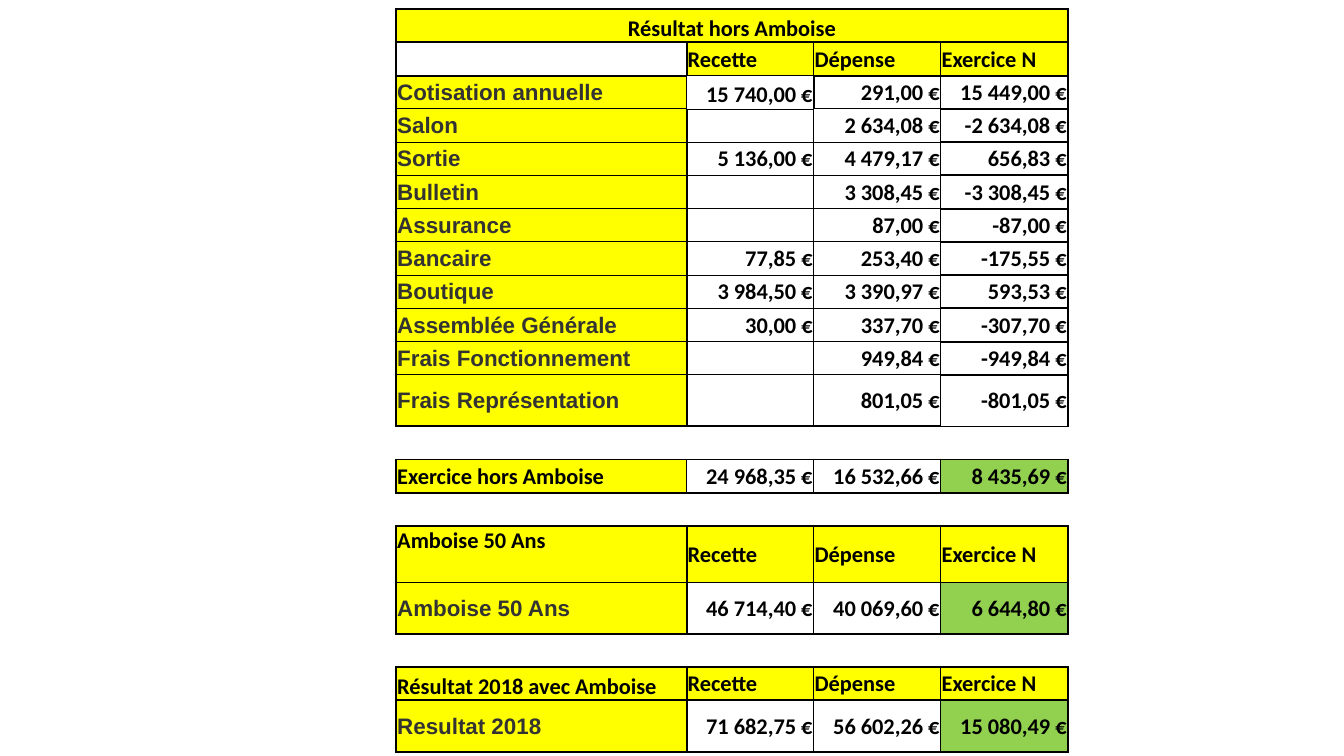
from lxml import etree
from pptx import Presentation, util as u
from pptx.dml.color import RGBColor
from pptx.enum import text
from pptx.oxml import ns

COLORS = {"ink": "000000", "label": "333333", "head": "FFFF00", "total": "92D050"}
HEADS = ["Recette", "Dépense", "Exercice N"]
WIDTHS = [2.88, 1.26, 1.26, 1.26]
HEIGHTS = {"tall": 0.51, "double": 0.56}
ROW = 0.33

# Each row: kind, height, cell texts
ROWS = [
    ("title", "", ["Résultat hors Amboise", "", "", ""]),
    ("head", "", ["", *HEADS]),
    ("body", "", ["Cotisation annuelle", "15 740,00 €", "291,00 €", "15 449,00 €"]),
    ("body", "", ["Salon", "", "2 634,08 €", "-2 634,08 €"]),
    ("body", "", ["Sortie", "5 136,00 €", "4 479,17 €", "656,83 €"]),
    ("body", "", ["Bulletin", "", "3 308,45 €", "-3 308,45 €"]),
    ("body", "", ["Assurance", "", "87,00 €", "-87,00 €"]),
    ("body", "", ["Bancaire", "77,85 €", "253,40 €", "-175,55 €"]),
    ("body", "", ["Boutique", "3 984,50 €", "3 390,97 €", "593,53 €"]),
    ("body", "", ["Assemblée Générale", "30,00 €", "337,70 €", "-307,70 €"]),
    ("body", "", ["Frais Fonctionnement", "", "949,84 €", "-949,84 €"]),
    ("body", "tall", ["Frais Représentation", "", "801,05 €", "-801,05 €"]),
    ("gap", "", [""] * 4),
    ("sum", "", ["Exercice hors Amboise", "24 968,35 €", "16 532,66 €", "8 435,69 €"]),
    ("gap", "", [""] * 4),
    ("head", "double", ["Amboise 50 Ans", *HEADS]),
    ("total", "tall", ["Amboise 50 Ans", "46 714,40 €", "40 069,60 €", "6 644,80 €"]),
    ("gap", "", [""] * 4),
    ("head", "", ["Résultat 2018 avec Amboise", *HEADS]),
    ("total", "tall", ["Resultat 2018", "71 682,75 €", "56 602,26 €", "15 080,49 €"]),
]
FIRST, LAST = 2, 11

# Left, top, right, bottom widths that break the column rule
ODD = {
    (1, 1): (1.5, 1.5, 1, 0.5),
    (2, 0): (1.5, 1.5, 0.5, 1),
    (2, 1): (0.5, 0.5, 1.5, 0.5),
    (2, 2): (1.5, 1.5, 1, 1),
    (3, 1): (1.5, 0.5, 1, 1),
    (LAST, 3): (1, 1.5, 1.5, 1),
    (LAST + 1, 3): (0, 1, 0, 1.5),
    (13, 0): (1.5, 1.5, 1, 1.5),
    (13, 1): (1, 1.5, 1, 1.5),
}


def edges(row, col, kind):
    """Return the left, top, right and bottom border widths in points."""
    if (row, col) in ODD:
        return ODD[row, col]
    if kind == "title":
        return (1.5,) * 4
    if kind == "gap":
        return 0, 1.5, 0, 1.5
    left = 1.5 if col < 2 else 1
    right = 1.5 if col in (0, 3) else 1
    inner = kind == "body" and col < 3
    top = 1 if inner and row > FIRST else 1.5
    base = 1 if inner and row < LAST else 1.5
    return left, top, right, base


def tint(kind, col, words):
    """Return the fill name of a cell, or None when it has no fill."""
    if kind == "title" or (kind == "head" and words):
        return "head"
    if kind in ("body", "sum", "total") and col == 0:
        return "head"
    if kind in ("sum", "total") and col == 3:
        return "total"
    return None


class Deck:
    def __init__(self):
        self.file = Presentation()
        self.file.slide_width = u.Inches(13.33)
        self.file.slide_height = u.Inches(7.5)
        self.slide = self.file.slides.add_slide(self.file.slide_layouts[6])
        self.size = 16

    def rgb(self, name):
        return RGBColor.from_string(COLORS[name])

    def border(self, cell, widths):
        props = cell._tc.get_or_add_tcPr()
        for side, width in zip("LTRB", widths):
            line = etree.SubElement(props, ns.qn(f"a:ln{side}"), w=str(u.Pt(width)))
            if width:
                fill = etree.SubElement(line, ns.qn("a:solidFill"))
                etree.SubElement(fill, ns.qn("a:srgbClr"), val=COLORS["ink"])
            else:
                etree.SubElement(line, ns.qn("a:noFill"))

    def paint(self, cell, name):
        if name:
            cell.fill.solid()
            cell.fill.fore_color.rgb = self.rgb(name)
        else:
            cell.fill.background()

    def label(self, cell, words, align, anchor, grey):
        cell.margin_left = cell.margin_right = cell.margin_top = u.Inches(0.01)
        cell.margin_bottom = 0
        cell.vertical_anchor = anchor
        para = cell.text_frame.paragraphs[0]
        if not words:
            etree.SubElement(para._p, ns.qn("a:endParaRPr"), sz=str(self.size * 100))
            return
        para.text = words
        para.alignment = align
        font = para.runs[0].font
        font.size, font.bold = u.Pt(self.size), True
        font.name = "Arial" if grey else "Calibri"
        font.color.rgb = self.rgb("label" if grey else "ink")

    def table(self, left, top, rows):
        tall = [HEIGHTS.get(size, ROW) for _, size, _ in rows]
        frame = self.slide.shapes.add_table(
            len(rows), len(WIDTHS), u.Inches(left), u.Inches(top),
            u.Inches(sum(WIDTHS)), u.Inches(sum(tall)))
        grid = frame.table
        grid.first_row = grid.horz_banding = False
        for col, width in zip(grid.columns, WIDTHS):
            col.width = u.Inches(width)
        for row, height in zip(grid.rows, tall):
            row.height = u.Inches(height)
        side, spot = text.PP_ALIGN, text.MSO_ANCHOR
        for r, (kind, size, line) in enumerate(rows):
            for c, words in enumerate(line):
                cell = grid.cell(r, c)
                align = side.RIGHT if c and kind != "head" else side.LEFT
                anchor = spot.MIDDLE
                if kind == "title":
                    align, anchor = side.CENTER, spot.BOTTOM
                elif kind == "head" and c == 0:
                    anchor = spot.TOP if size == "double" else spot.BOTTOM
                elif (r, c) == (FIRST, 1):
                    anchor = spot.BOTTOM
                grey = c == 0 and kind in ("body", "total")
                self.border(cell, edges(r, c, kind))
                self.paint(cell, tint(kind, c, words))
                self.label(cell, words, align, anchor, grey)
        grid.cell(0, 0).merge(grid.cell(0, len(WIDTHS) - 1))


def main():
    deck = Deck()
    deck.table(3.93, 0.09, ROWS)
    deck.file.save("out.pptx")


if __name__ == "__main__":
    main()
